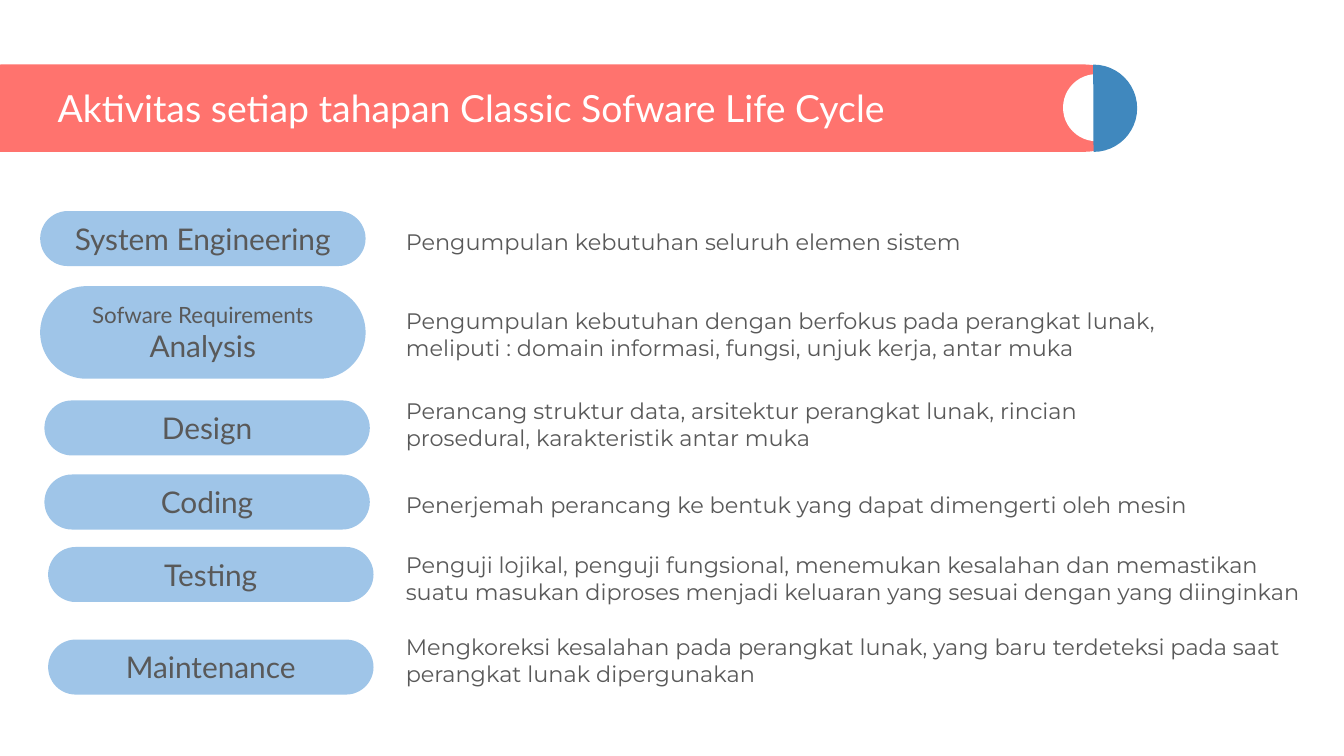
from dataclasses import dataclass

from pptx import Presentation
from pptx.dml.color import RGBColor
from pptx.enum.shapes import MSO_SHAPE
from pptx.enum.text import MSO_ANCHOR, PP_ALIGN
from pptx.util import Cm, Pt

ROUND_RECT = MSO_SHAPE.ROUNDED_RECTANGLE
OVAL = MSO_SHAPE.OVAL
PIE = MSO_SHAPE.PIE
TOP = MSO_ANCHOR.TOP
MIDDLE = MSO_ANCHOR.MIDDLE
LEFT = PP_ALIGN.LEFT
CENTER = PP_ALIGN.CENTER


@dataclass(frozen=True)
class Theme:
    coral: RGBColor = RGBColor(0xFF, 0x73, 0x6E)
    blue: RGBColor = RGBColor(0x40, 0x88, 0xBE)
    pale_blue: RGBColor = RGBColor(0x9F, 0xC5, 0xE8)
    white: RGBColor = RGBColor(0xFF, 0xFF, 0xFF)
    grey: RGBColor = RGBColor(0x59, 0x59, 0x59)
    heading_font: str = "Lato"
    body_font: str = "Montserrat"
    title_size: int = 20
    label_size: int = 16
    body_size: int = 12


@dataclass(frozen=True)
class Box:
    """A rectangle in centimetres."""
    left: float
    top: float
    width: float
    height: float

    def lengths(self) -> tuple:
        return Cm(self.left), Cm(self.top), Cm(self.width), Cm(self.height)


@dataclass(frozen=True)
class Stage:
    label: str
    pill_left: float
    pill_top: float
    lines: tuple
    text_top: float
    text_height: float
    text_width: float = 15.34
    text_inset: float = 0.25
    pill_height: float = 1.04
    lead: str = ""


THEME = Theme()
PILL_WIDTH = 6.15
TEXT_LEFT = 7.42
SIDE_INSET = 0.25

STAGES = (
    Stage("System Engineering", 0.76, 3.99,
          ("Pengumpulan kebutuhan seluruh elemen sistem",), 4.06, 0.86),
    Stage("Analysis", 0.76, 5.41,
          ("Pengumpulan kebutuhan dengan berfokus pada perangkat lunak, "
           "meliputi : domain informasi, fungsi, unjuk kerja, antar muka",),
          5.56, 1.7, pill_height=1.75, lead="Sofware Requirements "),
    Stage("Design", 0.84, 7.57,
          ("Perancang struktur data, arsitektur perangkat lunak, rincian",
           "prosedural, karakteristik antar muka"), 7.26, 2.21),
    Stage("Coding", 0.84, 8.97,
          ("Penerjemah perancang ke bentuk yang dapat dimengerti oleh mesin",),
          9.04, 1.5),
    Stage("Testing", 0.91, 10.34,
          ("Penguji lojikal, penguji fungsional, menemukan kesalahan dan memastikan "
           "suatu masukan diproses menjadi keluaran yang sesuai dengan yang diinginkan",),
          10.29, 1.27, text_width=17.65, text_inset=0.13),
    Stage("Maintenance", 0.91, 12.09,
          ("Mengkoreksi kesalahan pada perangkat lunak, yang baru terdeteksi pada saat",
           "perangkat lunak dipergunakan"),
          11.84, 1.27, text_width=17.65, text_inset=0.13),
)


def add_flat_shape(slide, kind, box: Box, color: RGBColor, adjustments=(), rotation=0):
    sp = slide.shapes.add_shape(kind, *box.lengths())
    sp.shadow.inherit = False
    sp.fill.solid()
    sp.fill.fore_color.rgb = color
    sp.line.fill.background()
    sp.rotation = rotation
    for i, value in enumerate(adjustments):
        sp.adjustments[i] = value
    return sp


def set_up_frame(tf, anchor, inset: float) -> None:
    tf.word_wrap = True
    tf.vertical_anchor = anchor
    tf.margin_left = tf.margin_right = Cm(SIDE_INSET)
    tf.margin_top = tf.margin_bottom = Cm(inset)


def style(p, font: str, size: int, color: RGBColor, align=LEFT) -> None:
    p.alignment = align
    p.font.name = font
    p.font.size = Pt(size)
    p.font.color.rgb = color


def add_text(slide, box: Box, lines, font: str, size: int, color: RGBColor,
             anchor=TOP, inset: float = SIDE_INSET) -> None:
    tf = slide.shapes.add_textbox(*box.lengths()).text_frame
    set_up_frame(tf, anchor, inset)
    tf.text = "\n".join(lines)
    for p in tf.paragraphs:
        style(p, font, size, color)


def add_header(slide) -> None:
    add_flat_shape(slide, ROUND_RECT, Box(-0.81, 1.22, 22.15, 1.65), THEME.coral, (0.5,))
    add_flat_shape(slide, OVAL, Box(20.09, 1.4, 1.27, 1.27), THEME.white, rotation=180)
    # Pie angles are in units of 5/3 degree.
    add_flat_shape(slide, PIE, Box(19.84, 1.22, 1.65, 1.65), THEME.blue,
                   (53.67, 162), rotation=180)
    add_text(slide, Box(0.84, 1.52, 18.82, 1.04),
             ("Aktivitas setiap tahapan Classic Sofware Life Cycle",),
             THEME.heading_font, THEME.title_size, THEME.white, MIDDLE)


def add_stage(slide, stage: Stage) -> None:
    box = Box(stage.pill_left, stage.pill_top, PILL_WIDTH, stage.pill_height)
    tf = add_flat_shape(slide, ROUND_RECT, box, THEME.pale_blue, (0.5,)).text_frame
    set_up_frame(tf, MIDDLE, SIDE_INSET)
    p = tf.paragraphs[0]
    style(p, THEME.heading_font, THEME.label_size, THEME.grey, CENTER)
    if stage.lead:
        r = p.add_run()
        r.text = stage.lead
        r.font.size = Pt(THEME.body_size)
    p.add_run().text = stage.label

    add_text(slide, Box(TEXT_LEFT, stage.text_top, stage.text_width, stage.text_height),
             stage.lines, THEME.body_font, THEME.body_size, THEME.grey,
             inset=stage.text_inset)


def main() -> None:
    prs = Presentation()
    prs.slide_width, prs.slide_height = Cm(25.4), Cm(14.29)
    slide = prs.slides.add_slide(prs.slide_layouts[6])
    add_header(slide)
    for stage in STAGES:
        add_stage(slide, stage)
    prs.save("out.pptx")


if __name__ == "__main__":
    main()
